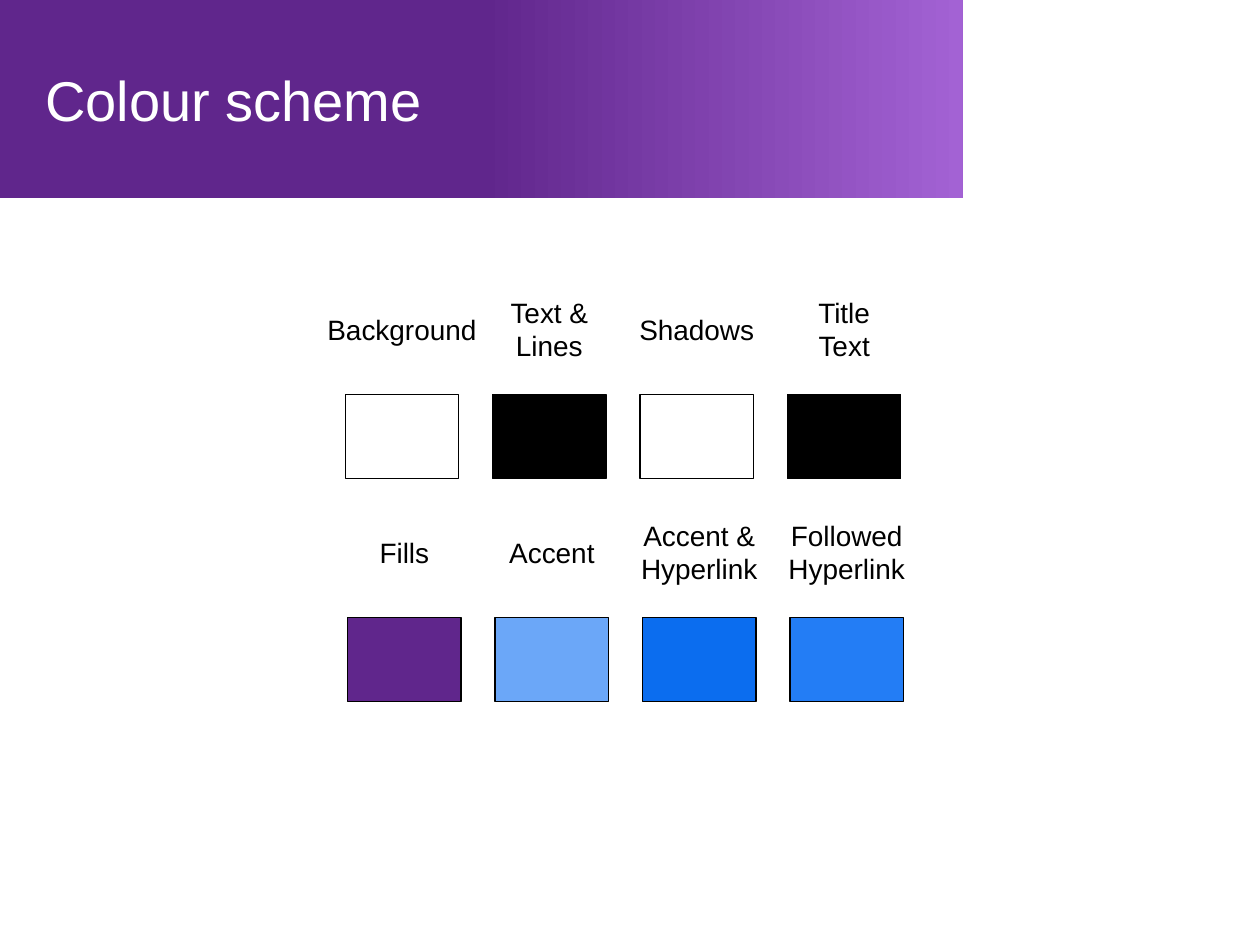
from copy import deepcopy

from pptx import Presentation
from pptx.dml.color import RGBColor
from pptx.enum import shapes, text
from pptx.oxml.ns import qn
from pptx.util import Inches, Pt

COLOURS = {
    "white": "FFFFFF",
    "black": "000000",
    "purple": "60268C",
    "lilac": "A362D4",
    "sky": "6BA7F8",
    "blue": "0B6DEF",
    "bright blue": "237DF5",
}
FONT = "Arial"
SWATCH_WIDTH, SWATCH_HEIGHT = 0.9, 0.67
COLUMN_PITCH = 1.17
LABEL_RISE = 0.52  # from swatch top up to the label's middle

# Each row: left, top, then (label, label width, colour); \v is a line break
ROWS = [
    (2.74, 3.13, [
        ("Background", 1.42, "white"),
        ("Text &\nLines", 0.87, "black"),
        ("Shadows", 1.14, "white"),
        ("Title\vText", 0.66, "black"),
    ]),
    (2.76, 4.9, [
        ("Fills", 0.63, "purple"),
        ("Accent", 0.92, "sky"),
        ("Accent &\nHyperlink", 1.16, "blue"),
        ("Followed\nHyperlink", 1.16, "bright blue"),
    ]),
]


def rgb(name):
    return RGBColor.from_string(COLOURS[name])


def add_rectangle(slide, left, top, width, height):
    shape = slide.shapes.add_shape(
        shapes.MSO_SHAPE.RECTANGLE,
        Inches(left), Inches(top), Inches(width), Inches(height))
    shape.shadow.inherit = False
    return shape


def add_banner(slide):
    banner = add_rectangle(slide, 0, 0, 7.64, 1.57)
    banner.line.fill.background()
    banner.fill.gradient()
    banner.fill.gradient_angle = 0
    # A third stop keeps the left half solid
    stop_list = banner._element.spPr.find(qn("a:gradFill")).find(qn("a:gsLst"))
    stop_list.insert(1, deepcopy(stop_list[0]))
    stops = [(0, "purple"), (0.5, "purple"), (1, "lilac")]
    for stop, (position, colour) in zip(banner.fill.gradient_stops, stops):
        stop.position = position
        stop.color.rgb = rgb(colour)


def add_text(slide, content, left, top, width, height, size, colour, alignment):
    box = slide.shapes.add_textbox(
        Inches(left), Inches(top), Inches(width), Inches(height))
    frame = box.text_frame
    frame.text = content
    frame.vertical_anchor = text.MSO_ANCHOR.MIDDLE
    for paragraph in frame.paragraphs:
        paragraph.alignment = alignment
        paragraph.font.name = FONT
        paragraph.font.size = Pt(size)
        paragraph.font.color.rgb = rgb(colour)
    return frame


def add_title(slide, content):
    frame = add_text(slide, content, 0.26, 0.16, 7.09, 1.25, 32, "white",
                     text.PP_ALIGN.LEFT)
    frame.word_wrap = True


def add_label(slide, content, centre, middle, width):
    height = 0.37 if len(content.splitlines()) == 1 else 0.64
    frame = add_text(slide, content, centre - width / 2, middle - height / 2,
                     width, height, 16, "black", text.PP_ALIGN.CENTER)
    frame.word_wrap = False
    frame.auto_size = text.MSO_AUTO_SIZE.SHAPE_TO_FIT_TEXT


def add_swatch(slide, left, top, colour):
    swatch = add_rectangle(slide, left, top, SWATCH_WIDTH, SWATCH_HEIGHT)
    swatch.fill.solid()
    swatch.fill.fore_color.rgb = rgb(colour)
    swatch.line.color.rgb = rgb("black")
    swatch.line.width = Pt(0.75)


def main():
    presentation = Presentation()
    presentation.slide_width = Inches(10)
    presentation.slide_height = Inches(7.5)
    slide = presentation.slides.add_slide(presentation.slide_layouts[6])
    slide.background.fill.solid()
    slide.background.fill.fore_color.rgb = rgb("white")

    # Heading
    add_banner(slide)
    add_title(slide, "Colour scheme")

    # Labelled swatches
    for row_left, top, entries in ROWS:
        for column, (label, width, colour) in enumerate(entries):
            left = row_left + column * COLUMN_PITCH
            add_swatch(slide, left, top, colour)
            add_label(slide, label, left + SWATCH_WIDTH / 2,
                      top - LABEL_RISE, width)

    presentation.save("out.pptx")


if __name__ == "__main__":
    main()
